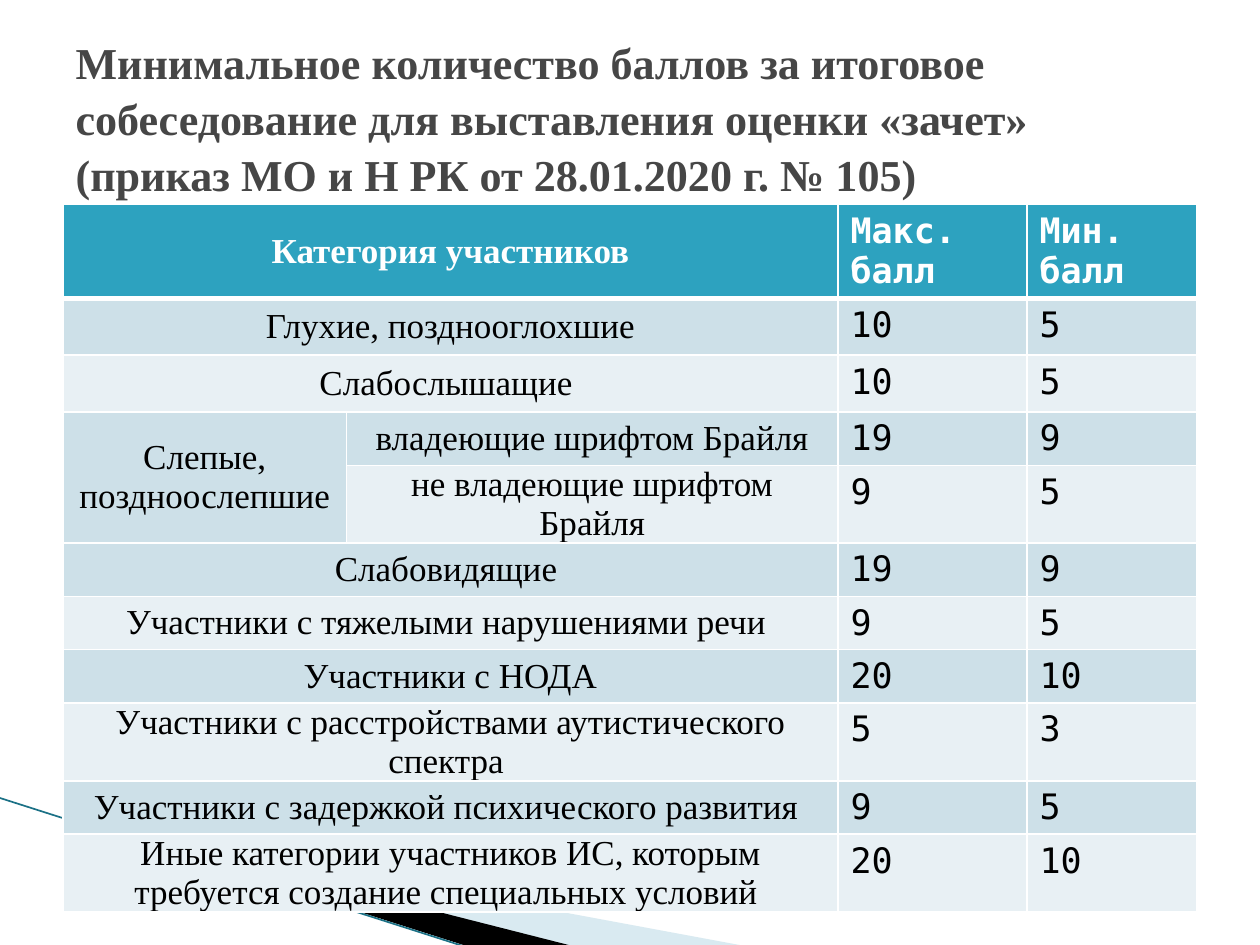
"""Build a slide with the minimum interview scores for each category of participants."""
from typing import NamedTuple, Optional

from lxml.etree import SubElement
from pptx import Presentation
from pptx.dml.color import RGBColor
from pptx.enum.shapes import MSO_CONNECTOR
from pptx.enum.text import MSO_ANCHOR, MSO_AUTO_SIZE, PP_ALIGN
from pptx.oxml.ns import qn
from pptx.util import Pt

COLORS = {
    "title": "464646",
    "header": "2DA2BF",
    "odd": "CDE0E8",
    "even": "E8F0F4",
    "white": "FFFFFF",
    "black": "000000",
    "pale": "A0CBDC",
    "teal": "1B7186",
}
SERIF = "Times New Roman"
MONO = "DejaVu Sans Mono"
TITLE = (
    "Минимальное количество баллов за итоговое собеседование для выставления "
    "оценки «зачет»\v(приказ МО и Н РК от 28.01.2020 г. № 105)"
)
COLUMN_WIDTHS = (162, 280.8, 108, 97.2)
ROW_HEIGHTS = (29.5, 32.4, 32.4) + (29.5,) * 8


class Score(NamedTuple):
    category: str
    maximum: str
    minimum: str
    subgroup: Optional[str] = None


class Wedge(NamedTuple):
    points: tuple
    color: str
    opacity: int


SCORES = (
    Score("Категория участников", "Макс. балл", "Мин. балл"),
    Score("Глухие, позднооглохшие", "10", "5"),
    Score("Слабослышащие ", "10", "5"),
    Score("Слепые, поздноослепшие", "19", "9", "владеющие шрифтом Брайля"),
    Score("", "9", "5", "не владеющие шрифтом Брайля"),
    Score("Слабовидящие ", "19", "9"),
    Score("Участники с тяжелыми нарушениями речи ", "9", "5"),
    Score("Участники с НОДА", "20", "10"),
    Score("Участники с расстройствами аутистического спектра ", "5", "3"),
    Score("Участники с задержкой психического развития ", "9", "5"),
    Score("Иные категории участников ИС, которым требуется создание специальных условий ", "20", "10"),
)
WEDGES = (
    Wedge(((39.6, 468.7), (428.4, 540.7), (328.3, 540.7), (39.6, 468)), "pale", 40),
    Wedge(((38.2, 467.3), (329, 540.7), (267.8, 541.4), (38.9, 468)), "black", 100),
)


def rgb(name: str) -> RGBColor:
    return RGBColor.from_string(COLORS[name])


def apply(target, values: dict) -> None:
    for name, value in values.items():
        setattr(target, name, value)


def format_font(font, name: str, size: float, bold: bool, color: str) -> None:
    apply(font, {"name": name, "size": Pt(size), "bold": bold})
    font.color.rgb = rgb(color)


def draw_wedge(page, wedge: Wedge) -> None:
    start, *others = wedge.points
    builder = page.shapes.build_freeform(*start, scale=float(Pt(1)))
    builder.add_line_segments(others, close=True)
    shape = builder.convert_to_shape()
    shape.shadow.inherit = False
    shape.fill.solid()
    shape.fill.fore_color.rgb = rgb(wedge.color)
    shape.line.fill.background()
    if wedge.opacity < 100:
        color = shape.element.spPr.find(qn("a:solidFill"))[0]
        SubElement(color, qn("a:alpha"), val=str(wedge.opacity * 1000))


def draw_edge(page) -> None:
    edge = page.shapes.add_connector(
        MSO_CONNECTOR.STRAIGHT, Pt(-0.7), Pt(455.8), Pt(267.1), Pt(541.4)
    )
    edge.line.width = Pt(0.95)
    edge.line.color.rgb = rgb("teal")
    SubElement(edge.element.spPr, qn("a:effectLst"))


def border_cell(cell, header_bottom: bool, header_top: bool) -> None:
    properties = cell._tc.get_or_add_tcPr()
    widths = {"lnL": 1, "lnR": 1, "lnT": 3 if header_top else 1, "lnB": 3 if header_bottom else 1}
    for position, (side, width) in enumerate(widths.items()):
        line = SubElement(properties, qn(f"a:{side}"), w=str(Pt(width)))
        fill = SubElement(line, qn("a:solidFill"))
        SubElement(fill, qn("a:srgbClr"), val=COLORS["white"])
        properties.insert(position, line)


def fill_cell(cell, text: str, row: int, is_score: bool) -> None:
    header = row == 0
    if text:
        cell.text = text
        para = cell.text_frame.paragraphs[0]
        format_font(
            para.runs[0].font, MONO if is_score else SERIF, 20, header,
            "white" if header else "black",
        )
        if not is_score:
            para.alignment = PP_ALIGN.CENTER
    if not is_score:
        apply(cell, {
            "vertical_anchor": MSO_ANCHOR.MIDDLE,
            "margin_left": Pt(5), "margin_right": Pt(5),
            "margin_top": 0, "margin_bottom": 0,
        })
    cell.fill.solid()
    cell.fill.fore_color.rgb = rgb("header" if header else "odd" if row % 2 else "even")
    border_cell(cell, header, row == 1)


def draw_scores(page) -> None:
    frame = page.shapes.add_table(
        len(SCORES), len(COLUMN_WIDTHS), Pt(36), Pt(116.8), Pt(648), Pt(419.8)
    )
    table = frame.table
    for column, width in zip(table.columns, COLUMN_WIDTHS):
        column.width = Pt(width)
    for row, height in zip(table.rows, ROW_HEIGHTS):
        row.height = Pt(height)
    frame.height = Pt(419.8)
    for row, score in enumerate(SCORES):
        texts = (score.category, score.subgroup or "", score.maximum, score.minimum)
        for column, text in enumerate(texts):
            fill_cell(table.cell(row, column), text, row, column > 1)
        if score.subgroup is None:
            table.cell(row, 0).merge(table.cell(row, 1))
        elif score.category:
            table.cell(row, 0).merge(table.cell(row + 1, 0))


def place_title(page) -> None:
    box = page.shapes.title
    apply(box, {"left": Pt(36), "top": Pt(21.6), "width": Pt(648), "height": Pt(90)})
    frame = box.text_frame
    frame.text = TITLE
    apply(frame, {
        "word_wrap": True,
        "auto_size": MSO_AUTO_SIZE.NONE,
        "vertical_anchor": MSO_ANCHOR.MIDDLE,
    })
    para = frame.paragraphs[0]
    apply(para, {"alignment": PP_ALIGN.LEFT, "line_spacing": 1.05})
    for span in para.runs:
        format_font(span.font, SERIF, 25.2, True, "title")
    box.element.getparent().append(box.element)


def main() -> None:
    deck = Presentation()
    apply(deck, {"slide_width": Pt(720), "slide_height": Pt(540)})
    page = deck.slides.add_slide(deck.slide_layouts[5])
    for wedge in WEDGES:
        draw_wedge(page, wedge)
    draw_edge(page)
    draw_scores(page)
    place_title(page)
    deck.save("out.pptx")


if __name__ == "__main__":
    main()
